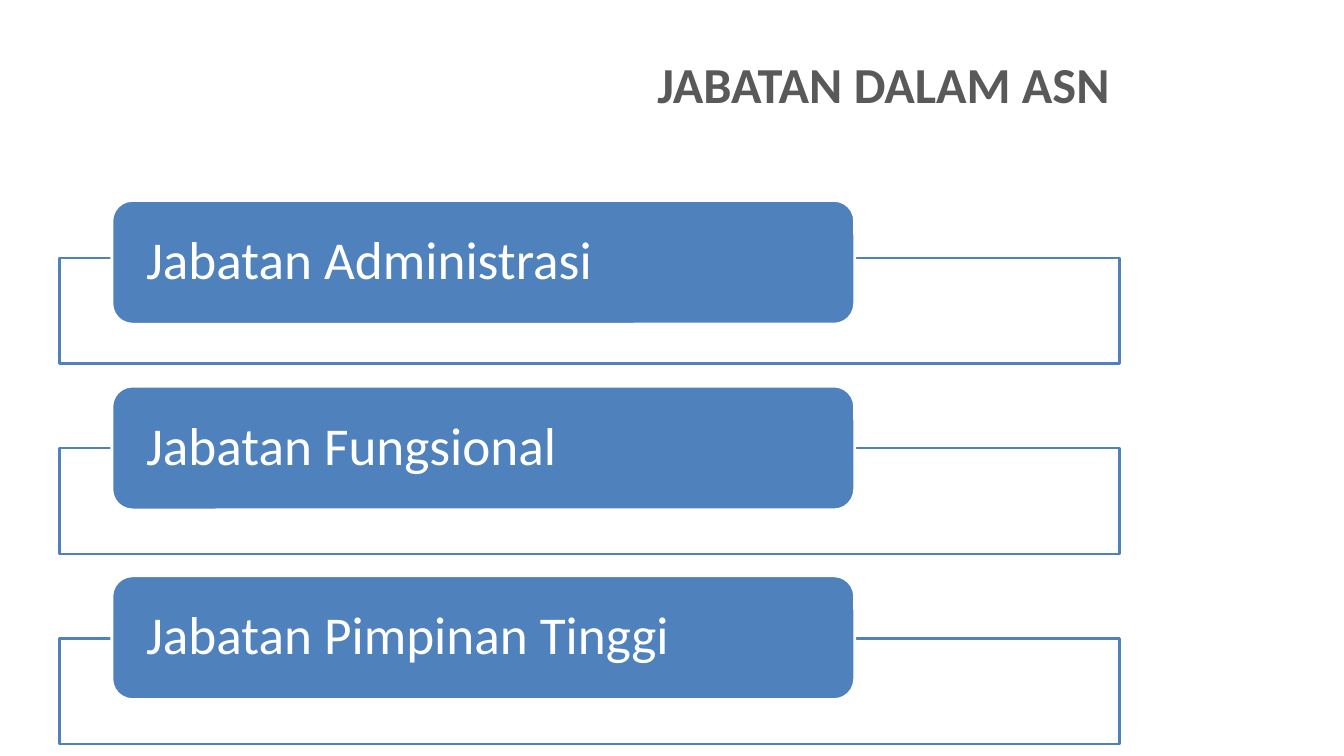
from dataclasses import dataclass

from lxml import etree
from pptx import Presentation
from pptx.dml.color import RGBColor
from pptx.enum.shapes import MSO_SHAPE
from pptx.enum.text import MSO_ANCHOR, PP_ALIGN
from pptx.oxml.ns import qn
from pptx.util import Cm, Pt

RECT, ROUNDED = MSO_SHAPE.RECTANGLE, MSO_SHAPE.ROUNDED_RECTANGLE
TOP, MIDDLE = MSO_ANCHOR.TOP, MSO_ANCHOR.MIDDLE
LEFT, RIGHT = PP_ALIGN.LEFT, PP_ALIGN.RIGHT

TITLE = "JABATAN DALAM ASN"
# Position name, and how far its tab rises above its frame (cm)
POSITIONS = [
    ("Jabatan Administrasi", 1.45),
    ("Jabatan Fungsional", 1.56),
    ("Jabatan Pimpinan Tinggi", 1.57),
]

# Geometry in cm
TITLE_BOX = (6.83, 1.14, 21.39, 1.19)
FRAME_LEFT, FRAME_TOP, FRAME_W, FRAME_H = 1.5, 6.5, 26.72, 2.67
FRAME_PITCH = 4.79
TAB_LEFT, TAB_W, TAB_H, TAB_INSET = 2.82, 18.72, 3.12, 0.71


@dataclass(frozen=True)
class Theme:
    font: str = "Calibri"
    blue: RGBColor = RGBColor(0x4F, 0x81, 0xBD)
    white: RGBColor = RGBColor(0xFF, 0xFF, 0xFF)
    grey: RGBColor = RGBColor(0x59, 0x59, 0x59)
    title_size: Pt = Pt(36)
    tab_size: Pt = Pt(38)
    line_width: Pt = Pt(2)
    frame_opacity: int = 90


THEME = Theme()


def add_box(slide, kind, box, fill, line):
    sp = slide.shapes.add_shape(kind, *map(Cm, box))
    sp.shadow.inherit = False
    sp.fill.solid()
    sp.fill.fore_color.rgb = fill
    sp.line.color.rgb = line
    sp.line.width = THEME.line_width
    return sp


def set_opacity(sp, percent):
    color = sp.fill._xPr.find(qn("a:solidFill"))[0]
    etree.SubElement(color, qn("a:alpha"), val=str(percent * 1000))


def write(sp, text, size, color, align, anchor, bold=False):
    tf = sp.text_frame
    tf.word_wrap = True
    tf.vertical_anchor = anchor
    p = tf.paragraphs[0]
    p.text = text
    p.alignment = align
    p.font.name = THEME.font
    p.font.size = size
    p.font.bold = bold
    p.font.color.rgb = color
    return tf


def add_position(slide, row, name, rise):
    """Add an outlined frame with a filled name tab over its top edge."""
    top = FRAME_TOP + row * FRAME_PITCH
    frame = add_box(slide, RECT, (FRAME_LEFT, top, FRAME_W, FRAME_H),
                    THEME.white, THEME.blue)
    set_opacity(frame, THEME.frame_opacity)
    tab = add_box(slide, ROUNDED, (TAB_LEFT, top - rise, TAB_W, TAB_H),
                  THEME.blue, THEME.white)
    tf = write(tab, name, THEME.tab_size, THEME.white, LEFT, MIDDLE)
    tf.margin_left = tf.margin_right = Cm(TAB_INSET)
    tf.margin_top = tf.margin_bottom = 0
    tf.paragraphs[0].line_spacing = 0.9


def main():
    prs = Presentation()
    prs.slide_width, prs.slide_height = Cm(33.87), Cm(19.05)
    slide = prs.slides.add_slide(prs.slide_layouts[6])
    title = slide.shapes.add_textbox(*map(Cm, TITLE_BOX))
    tf = write(title, TITLE, THEME.title_size, THEME.grey, RIGHT, TOP, bold=True)
    tf.margin_top = Cm(0.19)
    for row, (name, rise) in enumerate(POSITIONS):
        add_position(slide, row, name, rise)
    prs.save("out.pptx")


if __name__ == "__main__":
    main()
